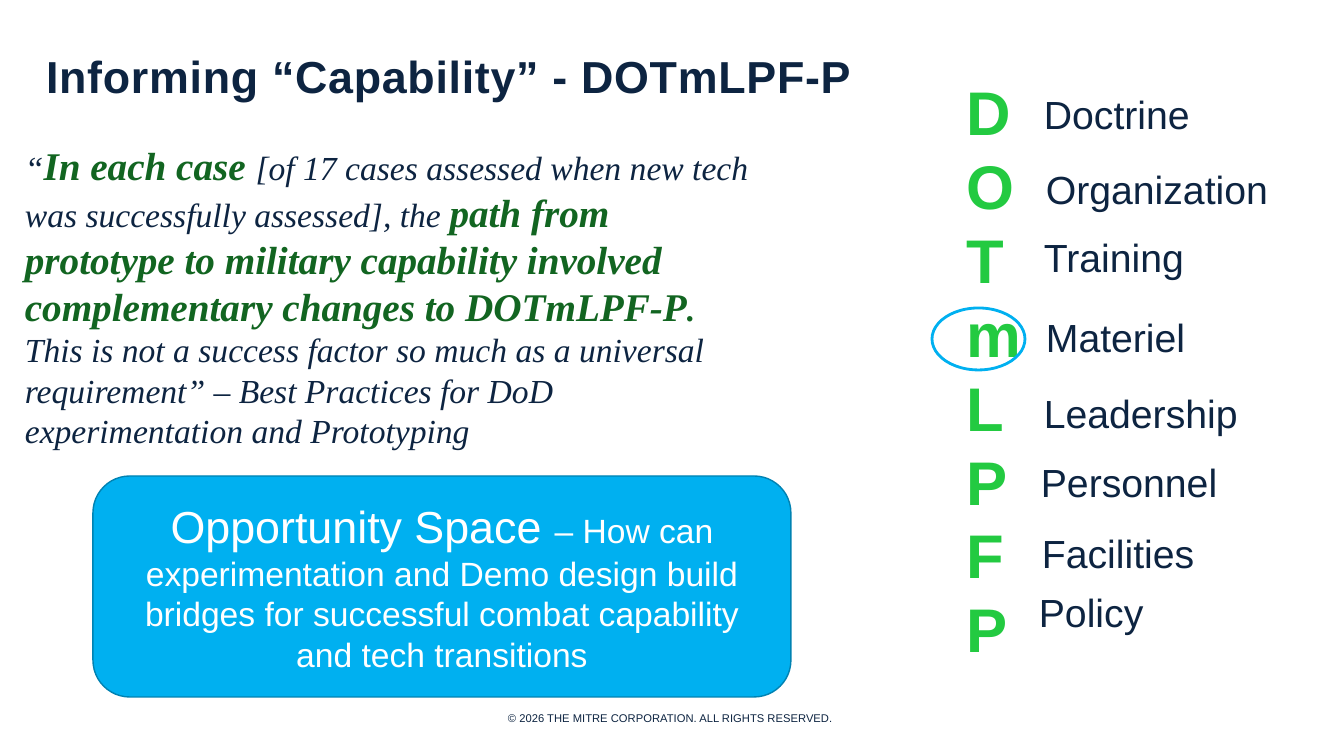
from pptx import Presentation
from pptx.dml.color import RGBColor
from pptx.enum import shapes, text
from pptx.util import Emu, Pt

PX = 914400 / 100.8
THEME = {
    "sans": "Arial", "serif": "Times New Roman",
    "navy": "0D2441", "green": "23CA41", "forest": "126521",
    "sky": "00B0F0", "edge": "0082B2", "white": "FFFFFF",
    "title": 32, "letter": 44, "large": 28, "normal": 24, "footer": 8,
}


def px(*lengths):
    return [Emu(round(length * PX)) for length in lengths]


def write(para, words, size, color, face="sans", **formats):
    span = para.add_run()
    span.text = words
    values = {"name": THEME[face], "size": Pt(THEME[size]), **formats}
    for name, value in values.items():
        setattr(span.font, name, value)
    span.font.color.rgb = RGBColor.from_string(THEME[color])
    return span


deck = Presentation()
deck.slide_width, deck.slide_height = px(1344, 756)
page = deck.slides.add_slide(deck.slide_layouts[5])

# Title
title = page.shapes.title
title.left, title.top, title.width, title.height = px(36, 39, 1159, 69)
title.text_frame.vertical_anchor = text.MSO_ANCHOR.BOTTOM
title.text_frame.auto_size = text.MSO_AUTO_SIZE.NONE
heading = title.text_frame.paragraphs[0]
heading.alignment = text.PP_ALIGN.LEFT
heading.line_spacing = 0.9
span = write(heading, "Informing “Capability” - DOTmLPF-P", "title", "navy", bold=True)
span.font._element.set("spc", "50")

# Acronym letters: the narrow box stacks them one per line
letters = page.shapes.add_textbox(*px(957, 69, 43, 607)).text_frame
letters.word_wrap = True
letters.auto_size = text.MSO_AUTO_SIZE.SHAPE_TO_FIT_TEXT
for number, initials in enumerate(["DOTmLPF", "P"]):
    para = letters.add_paragraph() if number else letters.paragraphs[0]
    para.alignment = text.PP_ALIGN.CENTER
    write(para, initials, "letter", "green", bold=True)

# Ring around the m
ring = page.shapes.add_shape(shapes.MSO_SHAPE.OVAL, *px(932, 308, 93, 62))
ring.shadow.inherit = False
ring.fill.background()
ring.line.color.rgb = RGBColor.from_string(THEME["sky"])
ring.line.width = Pt(2)

# Meaning of each letter
MEANINGS = [
    ("Doctrine", 1034, 85, 168), ("Organization", 1036, 160, 245),
    ("Training", 1034, 228, 162), ("Materiel", 1036, 308, 161),
    ("Leadership", 1034, 384, 217), ("Personnel", 1031, 453, 199),
    ("Facilities", 1032, 524, 174), ("Policy", 1029, 583, 126),
]
for meaning, left, top, width in MEANINGS:
    label = page.shapes.add_textbox(*px(left, top, width, 57)).text_frame
    label.word_wrap = False
    label.auto_size = text.MSO_AUTO_SIZE.SHAPE_TO_FIT_TEXT
    write(label.paragraphs[0], meaning, "large", "navy")

# Opportunity panel
panel = page.shapes.add_shape(shapes.MSO_SHAPE.ROUNDED_RECTANGLE, *px(93, 476, 698, 221))
panel.shadow.inherit = False
panel.fill.solid()
panel.fill.fore_color.rgb = RGBColor.from_string(THEME["sky"])
panel.line.color.rgb = RGBColor.from_string(THEME["edge"])
panel.line.width = Pt(1)
panel.text_frame.vertical_anchor = text.MSO_ANCHOR.MIDDLE
para = panel.text_frame.paragraphs[0]
para.alignment = text.PP_ALIGN.CENTER
write(para, "Opportunity Space ", "title", "white")
write(para, "– How can experimentation and Demo design build bridges for "
      "successful combat capability and tech transitions", "normal", "white")

# Quotation, with its key phrases in bold green
QUOTE = [
    ("“", "normal", "navy", False),
    ("In each case ", "large", "forest", True),
    ("[of 17 cases assessed when new tech was successfully assessed], the ",
     "normal", "navy", False),
    ("path from prototype to military capability involved complementary "
     "changes to DOTmLPF-P", "large", "forest", True),
    (". ", "normal", "forest", True),
    ("This is not a success factor so much as a universal requirement” – "
     "Best Practices for DoD experimentation and Prototyping",
     "normal", "navy", False),
]
quote = page.shapes.add_textbox(*px(15, 136, 753, 323)).text_frame
quote.word_wrap = True
quote.auto_size = text.MSO_AUTO_SIZE.SHAPE_TO_FIT_TEXT
for words, size, color, bold in QUOTE:
    write(quote.paragraphs[0], words, size, color, "serif", bold=bold, italic=True)

# Copyright line
footer = page.shapes.add_textbox(*px(186, 706, 972, 20)).text_frame
footer.word_wrap = True
footer.paragraphs[0].alignment = text.PP_ALIGN.CENTER
write(footer.paragraphs[0], "© 2026 THE MITRE CORPORATION. ALL RIGHTS RESERVED. ",
      "footer", "navy")

deck.save("out.pptx")
